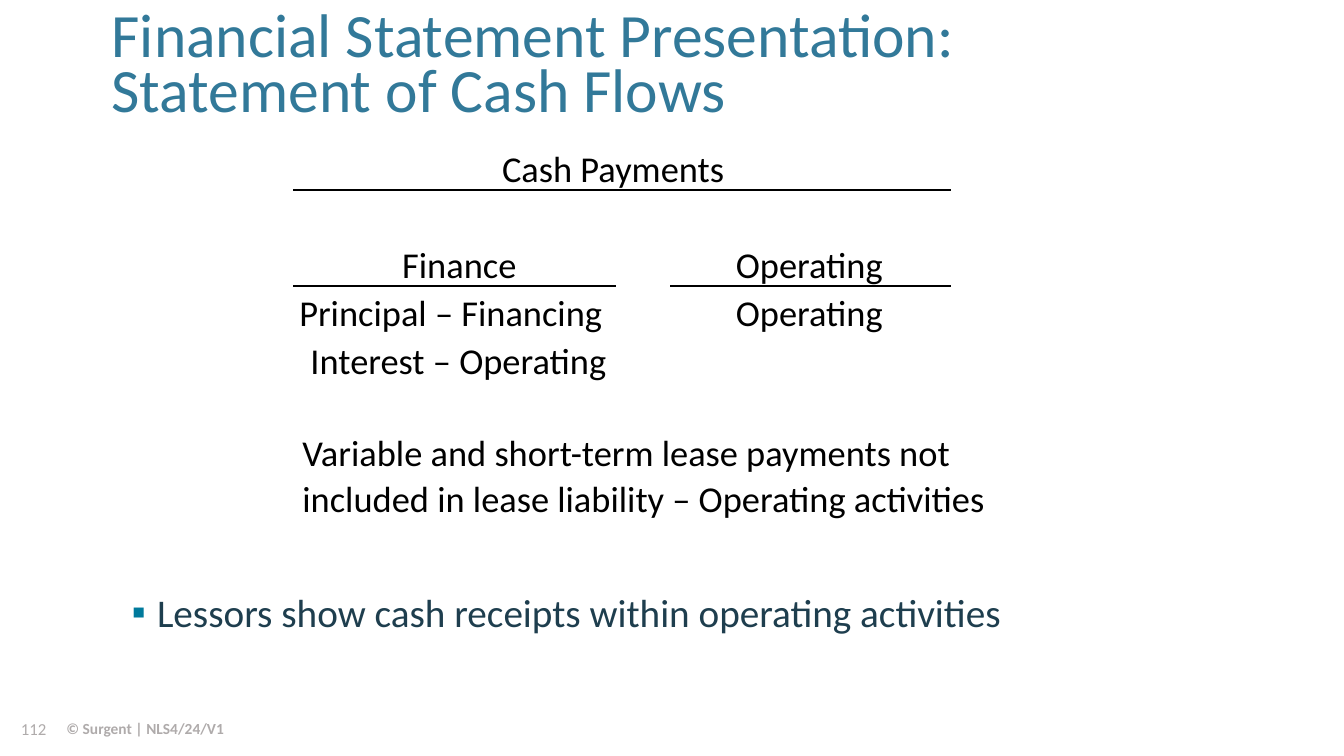
"""Build the cash flow statement presentation slide."""
from dataclasses import dataclass

from lxml.etree import SubElement
from pptx import Presentation
from pptx.dml.color import RGBColor
from pptx.enum.shapes import MSO_CONNECTOR
from pptx.enum.text import MSO_ANCHOR, MSO_AUTO_SIZE, PP_ALIGN
from pptx.oxml.ns import qn
from pptx.slide import Slide
from pptx.text.text import _Paragraph
from pptx.util import Pt


@dataclass(frozen=True)
class Theme:
    """Hold the colours, font and type sizes."""
    font: str = "Calibri"
    title_color: str = "327999"
    body_color: str = "1E3E4E"
    bullet_color: str = "007A9C"
    label_color: str = "000000"
    footer_color: str = "AFABAB"
    title_size: float = 44
    body_size: float = 28
    label_size: float = 26
    footer_size: float = 11
    number_size: float = 12
    rule_width: float = 1.75


@dataclass(frozen=True)
class TextBlock:
    """Describe a text box, with its lines and style, in points."""
    lines: tuple[str, ...]
    left: float
    top: float
    width: float
    height: float
    size: float
    color: str
    bold: bool = False
    inset: tuple[float, float] = (7.2, 3.6)
    wrap: bool = True
    anchor: MSO_ANCHOR = MSO_ANCHOR.MIDDLE
    alignment: PP_ALIGN = PP_ALIGN.LEFT
    line_spacing: float = 1.0
    bullet: str = ""


@dataclass(frozen=True)
class Label:
    """Describe one entry of the cash payments diagram."""
    text: str
    left: float
    top: float
    width: float


@dataclass(frozen=True)
class Rule:
    """Describe a horizontal rule."""
    left: float
    right: float
    top: float


THEME = Theme()
LABEL_HEIGHT = 31.7
HEADING_TOP, COLUMN_TOP, FIRST_TOP, SECOND_TOP = 104.4, 172.8, 206.9, 241.2
NOTE_LEFT, OPERATING_LEFT = 216, 525.6
RULE_LEFT, RULE_RIGHT = 209.5, 679.2
HEADING_RULE_TOP, COLUMN_RULE_TOP = 135.9, 204.3

LABELS = (
    Label("Cash Payments", 358.6, HEADING_TOP, 159.8),
    Label("Finance", 287.3, COLUMN_TOP, 82.1),
    Label("Operating", OPERATING_LEFT, COLUMN_TOP, 106.6),
    Label("Principal – Financing", 213.8, FIRST_TOP, 218.9),
    Label("Operating", OPERATING_LEFT, FIRST_TOP, 106.6),
    Label("Interest – Operating", 221.8, SECOND_TOP, 213.8),
    Label("Variable and short-term lease payments not", NOTE_LEFT, 307.4, 468),
    Label("included in lease liability – Operating activities", NOTE_LEFT, 339.8, 493.2),
)

RULES = (
    Rule(RULE_LEFT, RULE_RIGHT, HEADING_RULE_TOP),
    Rule(RULE_LEFT, 439.9, COLUMN_RULE_TOP),
    Rule(478.8, RULE_RIGHT, COLUMN_RULE_TOP),
)

BLOCKS = (
    TextBlock(("Financial Statement Presentation:", "Statement of Cash Flows"),
              72.7, 26.6, 846, 44.6, THEME.title_size, THEME.title_color,
              line_spacing=0.75),
    TextBlock(("Lessors show cash receipts within operating activities",),
              87.1, 420.5, 830, 43, THEME.body_size, THEME.body_color,
              anchor=MSO_ANCHOR.TOP, line_spacing=0.9, bullet="▪"),
    TextBlock(("© Surgent | NLS4/24/V1",), 40.3, 506.2, 152.6, 28.8,
              THEME.footer_size, THEME.footer_color, bold=True),
    TextBlock(("112",), 0, 506.2, 40.3, 28.8, THEME.number_size,
              THEME.footer_color, alignment=PP_ALIGN.RIGHT),
)


def add_bullet(paragraph: _Paragraph, character: str) -> None:
    """Give a paragraph a coloured bullet and a hanging indent."""
    properties = paragraph._p.get_or_add_pPr()
    properties.set("marL", str(Pt(18)))
    properties.set("indent", str(-Pt(18)))
    color = SubElement(properties, qn("a:buClr"))
    SubElement(color, qn("a:srgbClr")).set("val", THEME.bullet_color)
    SubElement(properties, qn("a:buFont")).set("typeface", THEME.font)
    SubElement(properties, qn("a:buChar")).set("char", character)


def add_text(slide: Slide, block: TextBlock) -> None:
    """Draw a text block run by run."""
    shape = slide.shapes.add_textbox(
        Pt(block.left), Pt(block.top), Pt(block.width), Pt(block.height))
    frame = shape.text_frame
    frame.word_wrap = block.wrap
    frame.auto_size = MSO_AUTO_SIZE.NONE if block.wrap else MSO_AUTO_SIZE.SHAPE_TO_FIT_TEXT
    frame.vertical_anchor = block.anchor
    horizontal, vertical = block.inset
    frame.margin_left = frame.margin_right = Pt(horizontal)
    frame.margin_top = frame.margin_bottom = Pt(vertical)
    paragraph = frame.paragraphs[0]
    paragraph.alignment = block.alignment
    paragraph.line_spacing = block.line_spacing
    if block.bullet:
        add_bullet(paragraph, block.bullet)
    for index, line in enumerate(block.lines):
        if index:
            paragraph.add_line_break()
        run = paragraph.add_run()
        run.text = line
        run.font.name = THEME.font
        run.font.size = Pt(block.size)
        run.font.bold = block.bold
        run.font.color.rgb = RGBColor.from_string(block.color)


def add_label(slide: Slide, label: Label) -> None:
    """Draw a diagram entry as an unwrapped text box without insets."""
    add_text(slide, TextBlock(
        (label.text,), label.left, label.top, label.width, LABEL_HEIGHT,
        THEME.label_size, THEME.label_color, inset=(0, 0), wrap=False,
        anchor=MSO_ANCHOR.TOP))


def add_rule(slide: Slide, rule: Rule) -> None:
    """Draw a horizontal rule without a shadow."""
    connector = slide.shapes.add_connector(
        MSO_CONNECTOR.STRAIGHT, Pt(rule.left), Pt(rule.top), Pt(rule.right), Pt(rule.top))
    connector.line.color.rgb = RGBColor.from_string(THEME.label_color)
    connector.line.width = Pt(THEME.rule_width)
    SubElement(connector._element.spPr, qn("a:effectLst"))


def main() -> None:
    """Create and save the presentation."""
    presentation = Presentation()
    presentation.slide_width = Pt(960)
    presentation.slide_height = Pt(540)
    slide = presentation.slides.add_slide(presentation.slide_layouts[6])
    for block in BLOCKS:
        add_text(slide, block)
    for label in LABELS:
        add_label(slide, label)
    for rule in RULES:
        add_rule(slide, rule)
    presentation.save("out.pptx")


if __name__ == "__main__":
    main()
